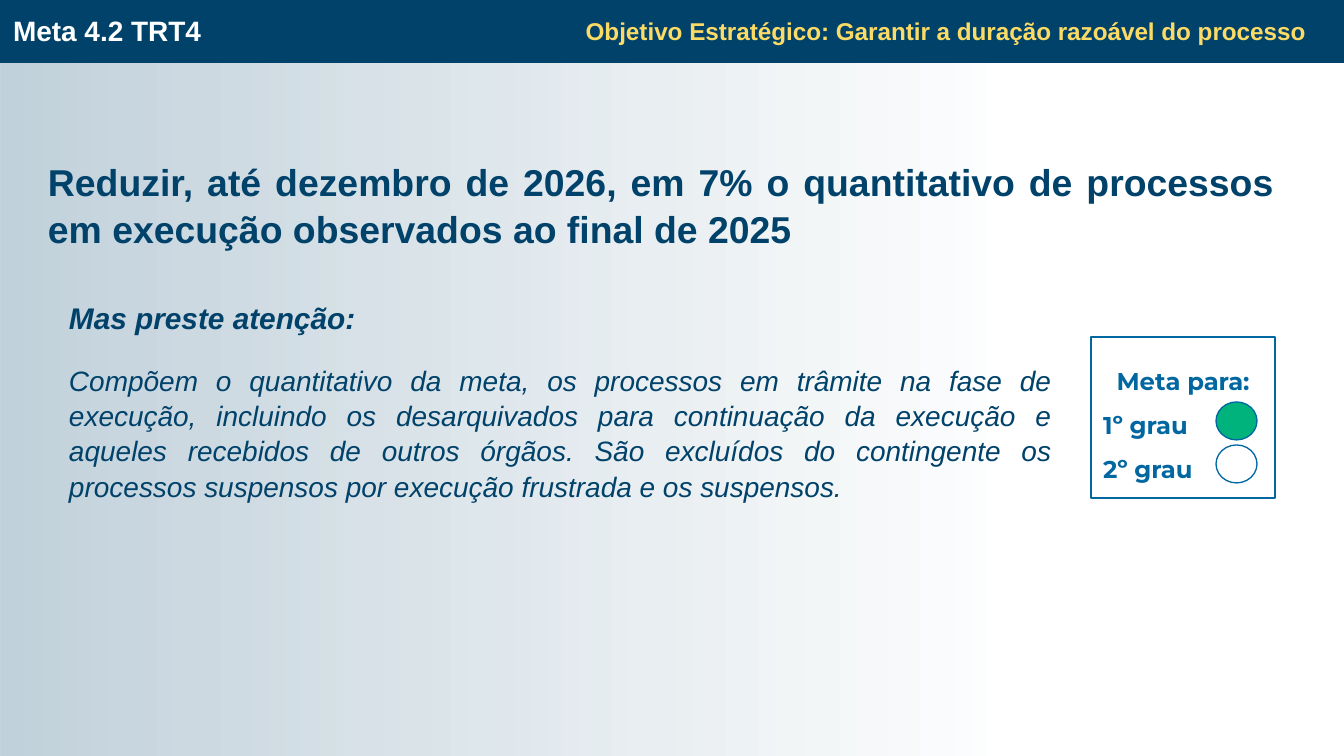
from lxml.etree import SubElement
from pptx import Presentation
from pptx.dml.color import RGBColor
from pptx.enum.shapes import MSO_SHAPE
from pptx.enum.text import MSO_ANCHOR, MSO_AUTO_SIZE, PP_ALIGN
from pptx.oxml.ns import qn
from pptx.util import Emu, Pt

EMU_PER_PX = 914400 / 134.4
COLORS = {"navy": "01426A", "blue": "0067A0", "yellow": "FBDB65",
          "green": "00B37C", "white": "FFFFFF"}


def px(length):
    return Emu(round(length * EMU_PER_PX))


def set_all(target, values):
    for name, value in values.items():
        setattr(target, name, value)


class SlideStyle:
    """Holds the look of the deck and the slide being filled."""

    margins = (13, 13, 13, 13)

    def __init__(self, slide):
        self.slide = slide

    def color(self, name):
        return RGBColor.from_string(COLORS[name])

    def place(self, shape, box):
        set_all(shape, dict(zip(("left", "top", "width", "height"), map(px, box))))

    def fill_text(self, shape, paragraphs, color, font="Arial", margins=margins,
                  anchor=MSO_ANCHOR.TOP, spacing=1.05):
        """Fill a shape with (text, paragraph format, font format) entries."""
        frame = shape.text_frame
        sides = ("margin_left", "margin_top", "margin_right", "margin_bottom")
        set_all(frame, {"word_wrap": True, "auto_size": MSO_AUTO_SIZE.NONE,
                        "vertical_anchor": anchor, **dict(zip(sides, map(px, margins)))})
        for index, (text, layout, style) in enumerate(paragraphs):
            paragraph = frame.add_paragraph() if index else frame.paragraphs[0]
            properties = paragraph._p.get_or_add_pPr()
            properties.set("marL", "0")
            properties.set("indent", "0")
            SubElement(properties, qn("a:buNone"))
            set_all(paragraph, {"alignment": PP_ALIGN.LEFT, "line_spacing": spacing,
                                "space_before": Pt(0), **layout})
            run = paragraph.add_run()
            run.text = text
            set_all(run.font, {"name": font, "bold": True, **style})
            run.font.color.rgb = self.color(color)

    def placeholder(self, index, box, paragraphs, color, **options):
        shape = self.slide.placeholders[index]
        self.slide.shapes._spTree.append(shape._element)  # bring to front
        self.place(shape, box)
        self.fill_text(shape, paragraphs, color, **options)

    def text(self, box, paragraphs, color, **options):
        shape = self.slide.shapes.add_textbox(*map(px, box))
        self.fill_text(shape, paragraphs, color, **options)

    def shape(self, kind, box, fill, line=None, opacity=None, parent=None):
        shape = (parent or self.slide).shapes.add_shape(kind, *map(px, box))
        shape.shadow.inherit = False
        shape.fill.solid()
        shape.fill.fore_color.rgb = self.color(fill)
        if opacity is not None:
            color = shape._element.spPr.find(".//" + qn("a:srgbClr"))
            SubElement(color, qn("a:alpha"), val=str(opacity * 1000))
        if line:
            shape.line.color.rgb = self.color(line)
            shape.line.width = Pt(0.7)
        else:
            shape.line.fill.background()
        return shape

    def fade(self, box, color, stops):
        """Draw a left-to-right fade from (position, opacity) percentages."""
        shape = self.shape(MSO_SHAPE.RECTANGLE, box, color)
        shape.fill.gradient()
        shape.fill.gradient_angle = 0
        stop_list = shape._element.spPr.find(".//" + qn("a:gsLst"))
        for stop in list(stop_list):
            stop_list.remove(stop)
        for position, opacity in stops:
            stop = SubElement(stop_list, qn("a:gs"), pos=str(position * 1000))
            tint = SubElement(stop, qn("a:srgbClr"), val=COLORS[color])
            SubElement(tint, qn("a:alpha"), val=str(opacity * 1000))


def main():
    presentation = Presentation()
    presentation.slide_width, presentation.slide_height = px(1344), px(756)
    slide = presentation.slides.add_slide(presentation.slide_layouts[1])
    style = SlideStyle(slide)
    justified = {"alignment": PP_ALIGN.JUSTIFY}

    # Background and header band
    style.fade((0, 0, 1344, 756), "navy", [(0, 24), (74, 0), (100, 0)])
    style.shape(MSO_SHAPE.RECTANGLE, (0, -3, 1344, 66), "navy")

    # Header texts
    style.placeholder(0, (0, 7, 546, 47), [("Meta 4.2 TRT4", {}, {"size": Pt(15)})],
                      "white", anchor=MSO_ANCHOR.MIDDLE, spacing=1.0)
    style.text((288, 2, 1030, 58),
               [("Objetivo Estratégico: Garantir a duração razoável do processo",
                 {"alignment": PP_ALIGN.RIGHT}, {"size": Pt(13)})],
               "yellow", anchor=MSO_ANCHOR.MIDDLE, spacing=1.0)

    # Goal
    style.text((35, 144, 1253, 105),
               [("Reduzir, até dezembro de 2026, em 7% o quantitativo de processos "
                 "em execução observados ao final de 2025", justified, {"size": Pt(20)})],
               "navy")

    # Explanation
    style.placeholder(1, (58, 285, 994, 246), [
        ("Mas preste atenção:", justified, {"size": Pt(16), "italic": True}),
        ("Compõem o quantitativo da meta, os processos em trâmite na fase de execução, "
         "incluindo os desarquivados para continuação da execução e aqueles recebidos "
         "de outros órgãos. São excluídos do contingente os processos suspensos por "
         "execução frustrada e os suspensos.",
         {**justified, "space_before": Pt(14)},
         {"size": Pt(15), "italic": True, "bold": False}),
    ], "navy", margins=(11, 13, 0, 13))

    # Key: which court level the goal applies to
    key = slide.shapes.add_group_shape()
    panel = style.shape(MSO_SHAPE.RECTANGLE, (1091, 337, 184, 161), "white",
                        line="blue", opacity=65, parent=key)
    size = {"size": Pt(13)}
    style.fill_text(panel, [("Meta para:", {"alignment": PP_ALIGN.CENTER}, size),
                            ("1º grau", {}, size), ("2º grau", {}, size)],
                    "blue", font="Montserrat", margins=(12, 12, 12, 12),
                    anchor=MSO_ANCHOR.MIDDLE, spacing=1.5)
    for row, fill in enumerate(("green", "white")):
        style.shape(MSO_SHAPE.OVAL, (1216, 402 + 43 * row, 41, 38), fill,
                    line="blue", parent=key)

    presentation.save("out.pptx")


if __name__ == "__main__":
    main()
